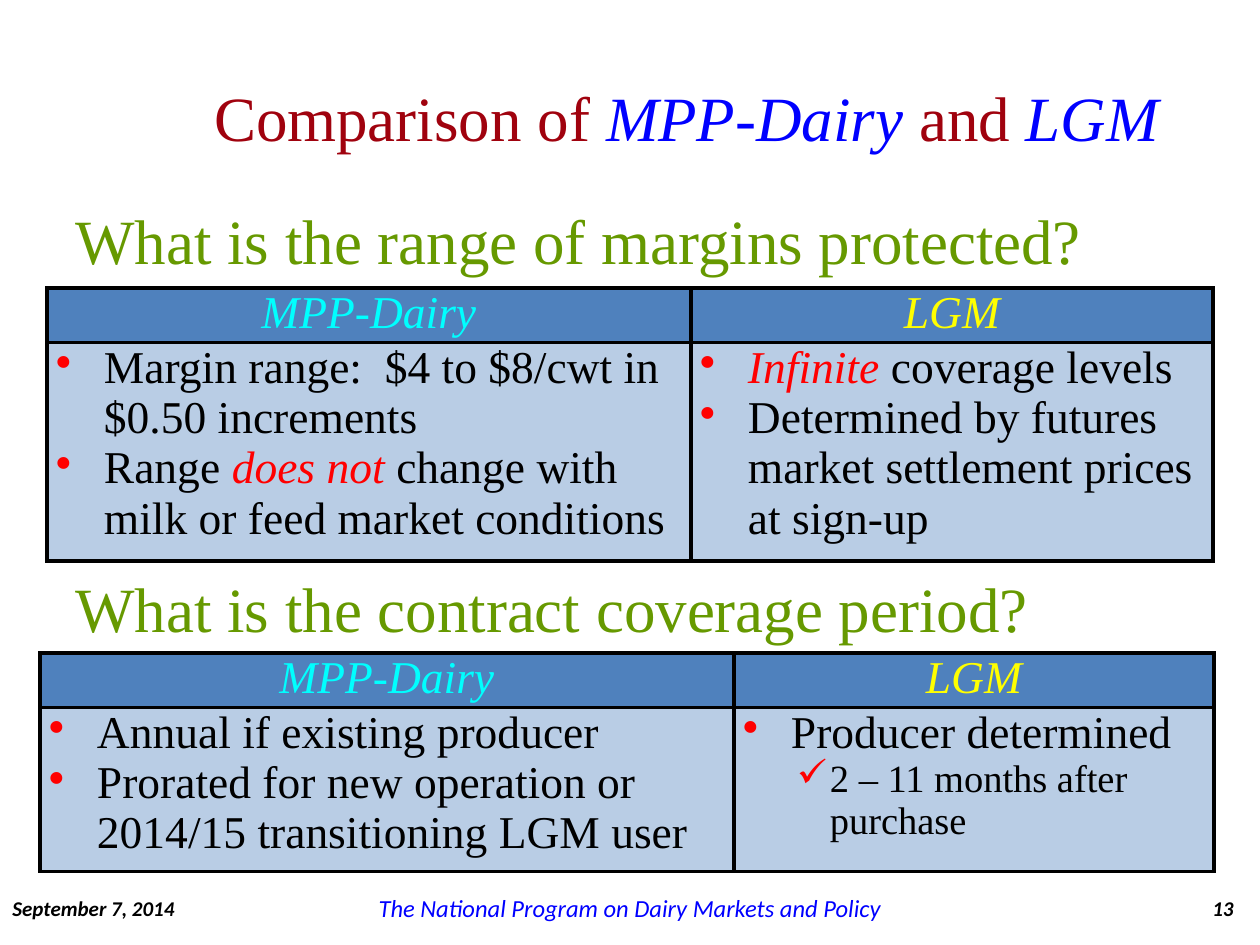
"""Build the slide comparing MPP-Dairy and LGM margins and coverage periods."""
from lxml.etree import SubElement
from pptx import Presentation
from pptx.dml.color import RGBColor
from pptx.enum.text import MSO_ANCHOR as ANCHOR, MSO_AUTO_SIZE as AUTO, PP_ALIGN as ALIGN
from pptx.oxml.ns import qn
from pptx.util import Pt

COLORS = {
    "maroon": "A0020E", "blue": "0000FF", "green": "669900", "black": "000000",
    "red": "FF0000", "cyan": "00FFFF", "yellow": "FFFF00",
    "head": "4F81BD", "body": "B9CDE5",
}
SERIF, SANS = "Times New Roman", "Calibri"

TITLE = [("Comparison of ", "maroon", False), ("MPP-Dairy ", "blue", True),
         ("and ", "maroon", False), ("LGM", "blue", True)]
HEADS = [("MPP-Dairy", "cyan"), ("LGM", "yellow")]
BULLET = {"char": "•", "indent": 48, "hang": 48, "size": 26}
CHECK = {"char": "✓", "indent": 87, "hang": 33, "size": 22}

SECTIONS = [
    {"question": "What is the range of margins protected?",
     "question_box": (63, 195, 1058, 89),
     "table_at": (47, 288), "cols": (644, 522), "rows": (50, 202),
     "cells": [
         [(BULLET, ["Margin range:  $4 to $8/cwt in $0.50 increments"]),
          (BULLET, ["Range ", ("does not ", "red", True),
                    "change with milk or feed market conditions"])],
         [(BULLET, [("Infinite", "red", True), " coverage levels"]),
          (BULLET, ["Determined by futures market settlement prices at sign-up"])],
     ]},
    {"question": "What is the contract coverage period?",
     "question_box": (63, 563, 989, 89),
     "table_at": (40, 653), "cols": (694, 480), "rows": (50, 152),
     "cells": [
         [(BULLET, ["Annual if existing producer"]),
          (BULLET, ["Prorated for new operation or 2014/15 transitioning LGM user"])],
         [(BULLET, ["Producer determined"]),
          (CHECK, ["2 – 11 months after purchase"])],
     ]},
]
FOOTERS = [
    ("September 7, 2014", (0, 893, 193, 30), ALIGN.LEFT, 12, "black", True),
    ("The National Program on Dairy Markets and Policy", (363, 893, 534, 30),
     ALIGN.CENTER, 14, "blue", False),
    ("13", (1148, 893, 98, 30), ALIGN.RIGHT, 12, "black", True),
]


def px(n):
    return round(n * 914400 / 126)


def rgb(name):
    return RGBColor.from_string(COLORS[name])


def add_run(p, text, color="black", italic=False, size=26, font=SERIF, bold=False):
    r = p.add_run()
    r.text = text
    f = r.font
    f.name, f.size, f.bold, f.italic = font, Pt(size), bold, italic
    f.color.rgb = rgb(color)


def add_text(s, text, box, align=ALIGN.LEFT, anchor=ANCHOR.MIDDLE, wrap=True, **fmt):
    tf = s.shapes.add_textbox(*map(px, box)).text_frame
    tf.word_wrap, tf.vertical_anchor = wrap, anchor
    tf.auto_size = AUTO.NONE if wrap else AUTO.SHAPE_TO_FIT_TEXT
    p = tf.paragraphs[0]
    p.alignment = align
    add_run(p, text, **fmt)


def set_bullet(p, bullet):
    pPr = p._p.get_or_add_pPr()
    pPr.set("marL", str(px(bullet["indent"])))
    pPr.set("indent", str(-px(bullet["hang"])))
    SubElement(SubElement(pPr, qn("a:buClr")), qn("a:srgbClr"), val=COLORS["red"])
    SubElement(pPr, qn("a:buChar"), char=bullet["char"])


def style_cell(cell, fill):
    cell.margin_left = cell.margin_right = px(9)
    cell.margin_top = cell.margin_bottom = 0
    tcPr = cell._tc.get_or_add_tcPr()
    for side in ("lnL", "lnR", "lnT", "lnB"):
        ln = SubElement(tcPr, qn("a:" + side), w=str(Pt(2.25)))
        SubElement(SubElement(ln, qn("a:solidFill")), qn("a:srgbClr"), val=COLORS["black"])
    cell.fill.solid()
    cell.fill.fore_color.rgb = rgb(fill)


def add_comparison(s, table_at, cols, rows, cells):
    box = (*table_at, sum(cols), sum(rows))
    table = s.shapes.add_table(2, 2, *map(px, box)).table
    table.first_row = table.horz_banding = False
    for row, height in zip(table.rows, rows):
        row.height = px(height)
    for c, (width, (name, color), items) in enumerate(zip(cols, HEADS, cells)):
        table.columns[c].width = px(width)
        head, body = table.cell(0, c), table.cell(1, c)
        style_cell(head, "head")
        style_cell(body, "body")
        p = head.text_frame.paragraphs[0]
        p.alignment = ALIGN.CENTER
        add_run(p, name, color, True)
        tf = body.text_frame
        for i, (bullet, runs) in enumerate(items):
            p = tf.add_paragraph() if i else tf.paragraphs[0]
            set_bullet(p, bullet)
            for run in runs:
                parts = (run,) if isinstance(run, str) else run
                add_run(p, *parts, size=bullet["size"])


def main():
    prs = Presentation()
    prs.slide_width, prs.slide_height = px(1260), px(945)
    s = prs.slides.add_slide(prs.slide_layouts[5])
    title = s.shapes.title
    title.left, title.top, title.width, title.height = map(px, (176, 38, 1021, 157))
    title.text_frame.vertical_anchor = ANCHOR.MIDDLE
    p = title.text_frame.paragraphs[0]
    p.alignment = ALIGN.CENTER
    for run in TITLE:
        add_run(p, *run, size=36)
    for sec in SECTIONS:
        add_text(s, sec["question"], sec["question_box"], anchor=ANCHOR.TOP,
                 wrap=False, color="green", size=36)
        add_comparison(s, sec["table_at"], sec["cols"], sec["rows"], sec["cells"])
    for text, box, align, size, color, bold in FOOTERS:
        add_text(s, text, box, align, size=size, color=color, bold=bold,
                 italic=True, font=SANS)
    prs.save("out.pptx")


if __name__ == "__main__":
    main()
